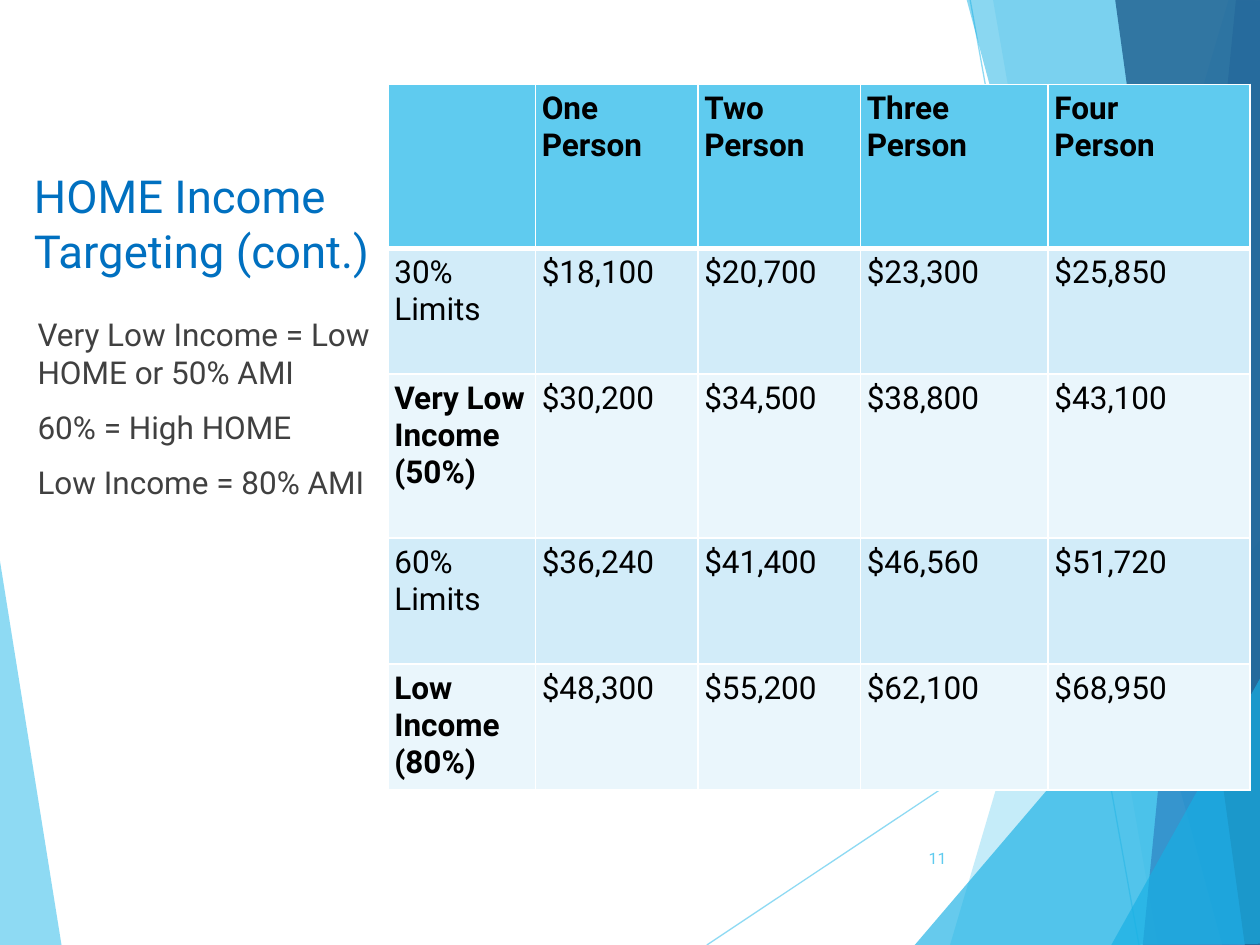
from dataclasses import dataclass

from lxml import etree
from pptx import Presentation
from pptx.dml.color import RGBColor
from pptx.enum.shapes import MSO_CONNECTOR
from pptx.enum.text import MSO_ANCHOR, PP_ALIGN
from pptx.oxml.ns import qn
from pptx.util import Inches, Pt

STRAIGHT = MSO_CONNECTOR.STRAIGHT
TOP, MIDDLE, BOTTOM = MSO_ANCHOR.TOP, MSO_ANCHOR.MIDDLE, MSO_ANCHOR.BOTTOM
LEFT, RIGHT = PP_ALIGN.LEFT, PP_ALIGN.RIGHT


@dataclass(frozen=True)
class Theme:
    font: str = "Roboto"
    sky: str = "5FCBEF"
    cyan: str = "17B0E4"
    blue: str = "2E83C3"
    navy: str = "226292"
    title: str = "0070C0"
    body: str = "404040"
    ink: str = "000000"
    rule: str = "FFFFFF"
    bands: tuple = ("D2ECF9", "EAF6FC")
    title_size: int = 26
    text_size: int = 18
    page_size: int = 9


THEME = Theme()

# Each facet: colour, opacity in percent, corner points in inches
FACETS_BACK = [
    (THEME.sky, 70, [(-0.01, 4.39), (0.49, 7.51), (-0.01, 7.5)]),
]
FACETS_FRONT = [
    (THEME.sky, 36, [(9.75, 0), (7.54, 7.5), (10.02, 7.51), (10.01, 0.01)]),
    (THEME.sky, 20, [(7.88, -0.01), (9.19, 7.5), (10.01, 7.5), (10.01, -0.01)]),
    (THEME.cyan, 66, [(7.26, 7.5), (10, 4.29), (10.01, 7.5)]),
    (THEME.cyan, 50, [(7.67, -0.01), (9.7, 7.5), (10.01, 7.49), (10.01, -0.01)]),
    (THEME.blue, 70, [(9.81, -0.01), (9.07, 7.5), (10.01, 7.5), (10, -0.01)]),
    (THEME.navy, 82, [(8.85, -0.01), (9.88, 7.5), (10.02, 7.5), (10, -0.01)]),
    (THEME.cyan, 66, [(8.82, 7.5), (10.02, 5.35), (10.02, 7.49)]),
]
RAYS = [((5.61, 7.5), (10.01, 4.57)), ((7.7, 0), (9.04, 7.5))]

COLS = [1.17, 1.29, 1.29, 1.49, 1.6]
ROWS = [1.3, 1, 1.3, 1, 1]
LIMITS = [
    ["", "One\nPerson", "Two\nPerson", "Three\nPerson", "Four\nPerson"],
    ["30% Limits", "$18,100", "$20,700", "$23,300", "$25,850"],
    ["Very Low Income (50%)", "$30,200", "$34,500", "$38,800", "$43,100"],
    ["60% Limits", "$36,240", "$41,400", "$46,560", "$51,720"],
    ["Low Income (80%)", "$48,300", "$55,200", "$62,100", "$68,950"],
]
NOTES = [
    "Very Low Income = Low HOME or 50% AMI",
    "60% = High HOME",
    "Low Income = 80% AMI",
]


def rgb(color):
    return RGBColor.from_string(color)


def fade(shape, percent):
    """Make every solid colour of the shape partly transparent."""
    for color in shape._element.spPr.iter(qn("a:srgbClr")):
        etree.SubElement(color, qn("a:alpha"), val=str(percent * 1000))


def add_facet(slide, color, percent, points):
    corners = [(Inches(x), Inches(y)) for x, y in points]
    pen = slide.shapes.build_freeform(*corners[0])
    pen.add_line_segments(corners[1:], close=True)
    shape = pen.convert_to_shape()
    shape.shadow.inherit = False
    shape.fill.solid()
    shape.fill.fore_color.rgb = rgb(color)
    shape.line.fill.background()
    fade(shape, percent)


def add_ray(slide, start, end):
    ends = [Inches(value) for value in (*start, *end)]
    ray = slide.shapes.add_connector(STRAIGHT, *ends)
    ray.line.color.rgb = rgb(THEME.sky)
    ray.line.width = Pt(0.75)
    fade(ray, 70)
    etree.SubElement(ray._element.spPr, qn("a:effectLst"))


def style(frame, size, color, bold=False, align=LEFT, before=0):
    for para in frame.paragraphs:
        para.alignment = align
        para.space_before = Pt(before)
        font = para.font
        font.name, font.size, font.bold = THEME.font, Pt(size), bold
        font.color.rgb = rgb(color)


def add_text(slide, box, text, size, color, anchor=TOP, align=LEFT, before=0):
    frame = slide.shapes.add_textbox(*map(Inches, box)).text_frame
    frame.word_wrap = True
    frame.vertical_anchor = anchor
    frame.text = text
    style(frame, size, color, align=align, before=before)


def add_edge(cell, side, width):
    edge = etree.SubElement(cell._tc.get_or_add_tcPr(), qn(f"a:ln{side}"),
                            w=str(Pt(width)))
    fill = etree.SubElement(edge, qn("a:solidFill"))
    etree.SubElement(fill, qn("a:srgbClr"), val=THEME.rule)


def fill_cell(cell, text, row, col):
    head = row == 0
    cell.margin_left = cell.margin_right = Inches(0.05)
    cell.margin_top = cell.margin_bottom = Inches(0.05)
    widths = {"L": 1, "R": 1, "T": 3 if row == 1 else 1, "B": 3 if head else 1}
    for side, width in widths.items():
        add_edge(cell, side, width)
    cell.fill.solid()
    cell.fill.fore_color.rgb = rgb(THEME.sky if head else THEME.bands[(row - 1) % 2])
    cell.text_frame.text = text
    bold = head or (col == 0 and "Income" in text)
    style(cell.text_frame, THEME.text_size, THEME.ink, bold)


def add_limits(slide, left, top):
    size = [Inches(value) for value in (left, top, sum(COLS), sum(ROWS))]
    table = slide.shapes.add_table(len(ROWS), len(COLS), *size).table
    table.first_row = table.horz_banding = False
    for column, width in zip(table.columns, COLS):
        column.width = Inches(width)
    for line, height in zip(table.rows, ROWS):
        line.height = Inches(height)
    for row, texts in enumerate(LIMITS):
        for col, text in enumerate(texts):
            fill_cell(table.cell(row, col), text, row, col)


def main():
    deck = Presentation()
    deck.slide_width, deck.slide_height = Inches(10), Inches(7.5)
    slide = deck.slides.add_slide(deck.slide_layouts[6])
    for facet in FACETS_BACK:
        add_facet(slide, *facet)
    for ray in RAYS:
        add_ray(slide, *ray)
    for facet in FACETS_FRONT:
        add_facet(slide, *facet)
    add_text(slide, (0.17, 0.85, 3.05, 1.4), "HOME Income Targeting (cont.)",
             THEME.title_size, THEME.title, anchor=BOTTOM)
    add_limits(slide, 3.08, 0.67)
    add_text(slide, (0.2, 2.45, 3.3, 1.88), "\n".join(NOTES),
             THEME.text_size, THEME.body, before=10)
    add_text(slide, (7.05, 6.61, 0.56, 0.4), "11",
             THEME.page_size, THEME.sky, anchor=MIDDLE, align=RIGHT)
    deck.save("out.pptx")


if __name__ == "__main__":
    main()
